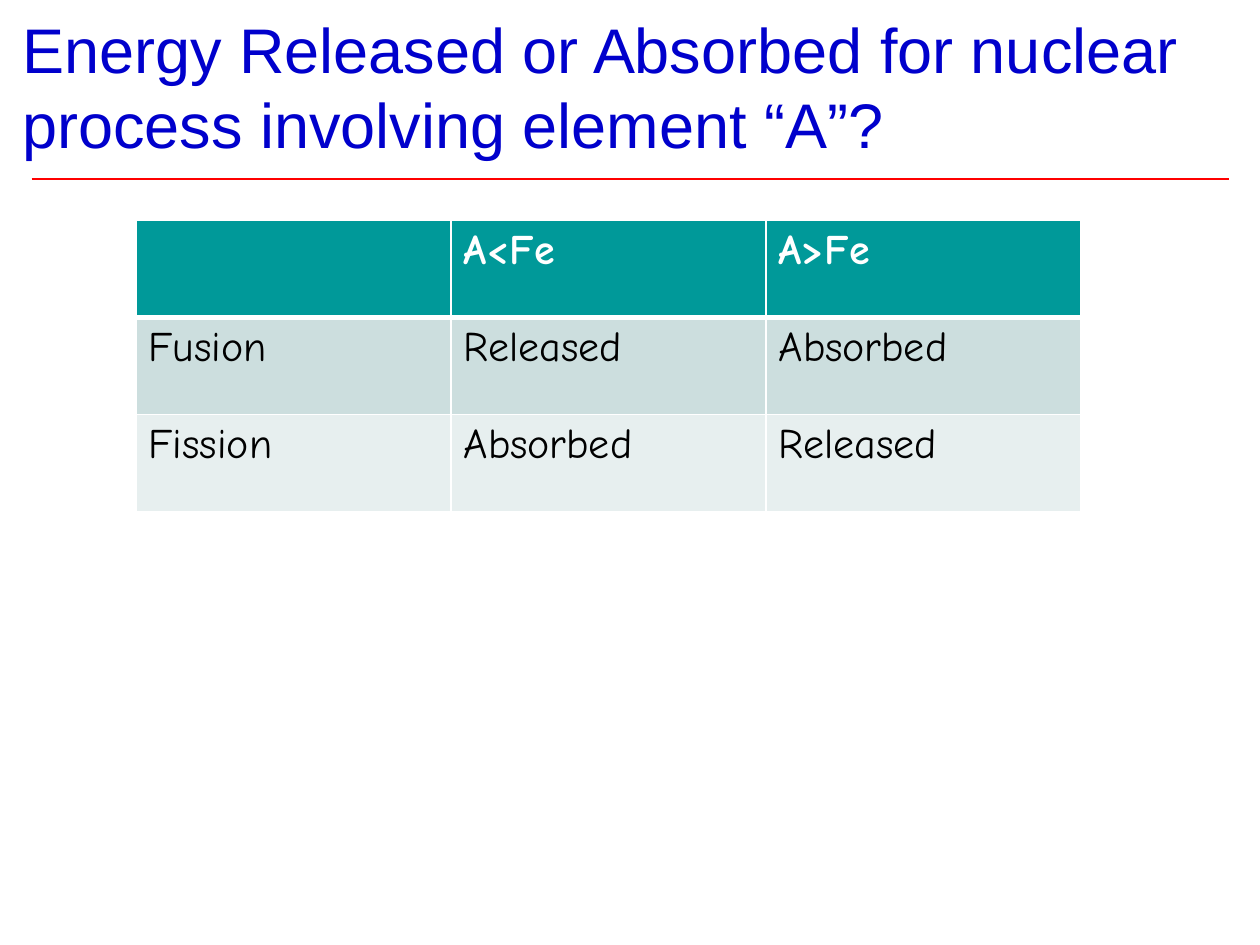
from dataclasses import dataclass

from lxml.etree import SubElement
from pptx import Presentation
from pptx.dml.color import RGBColor
from pptx.enum.shapes import MSO_CONNECTOR
from pptx.enum.text import MSO_ANCHOR
from pptx.oxml.ns import qn
from pptx.util import Inches, Pt


@dataclass(frozen=True)
class Theme:
    title_font: str = "Arial"
    table_font: str = "Comic Neue"
    title_size: int = 36
    table_size: int = 24
    title_color: str = "0000CC"
    rule_color: str = "FF0000"
    header_text: str = "FFFFFF"
    body_text: str = "000000"
    border: str = "FFFFFF"
    row_fills: tuple = ("009999", "CCDEDE", "E7EFEF")


THEME = Theme()
OUTCOMES = [
    ["", "A<Fe", "A>Fe"],
    ["Fusion", "Released", "Absorbed"],
    ["Fission", "Absorbed", "Released"],
]


def style_font(font, name, size, color, bold=False):
    font.name = name
    font.size = Pt(size)
    font.bold = bold
    font.color.rgb = RGBColor.from_string(color)


def add_rule(page, left, right, top):
    rule = page.shapes.add_connector(
        MSO_CONNECTOR.STRAIGHT, Inches(left), Inches(top), Inches(right), Inches(top)
    )
    rule.line.color.rgb = RGBColor.from_string(THEME.rule_color)
    rule.line.width = Pt(1.5)
    SubElement(rule._element.spPr, qn("a:effectLst"))


def add_title(page, text):
    box = page.shapes.add_textbox(Inches(0.08), 0, Inches(9.83), Inches(1.33))
    frame = box.text_frame
    frame.word_wrap = True
    frame.vertical_anchor = MSO_ANCHOR.BOTTOM
    para = frame.paragraphs[0]
    para.text = text
    style_font(para.font, THEME.title_font, THEME.title_size, THEME.title_color)


def add_borders(cell, top, bottom):
    """Draw the cell's borders; call before filling, as the schema puts lines first."""
    properties = cell._tc.get_or_add_tcPr()
    for side, width in (("L", 1), ("R", 1), ("T", top), ("B", bottom)):
        line = SubElement(properties, qn(f"a:ln{side}"), w=str(Pt(width)))
        fill = SubElement(line, qn("a:solidFill"))
        SubElement(fill, qn("a:srgbClr"), val=THEME.border)


def add_outcome_table(page, rows):
    table = page.shapes.add_table(
        len(rows), len(rows[0]), Inches(1.08), Inches(1.75), Inches(7.5), Inches(2.31)
    ).table
    for row_index, texts in enumerate(rows):
        header = row_index == 0
        color = THEME.header_text if header else THEME.body_text
        for column_index, text in enumerate(texts):
            cell = table.cell(row_index, column_index)
            add_borders(cell, top=3 if row_index == 1 else 1, bottom=3 if header else 1)
            cell.fill.solid()
            cell.fill.fore_color.rgb = RGBColor.from_string(THEME.row_fills[row_index])
            para = cell.text_frame.paragraphs[0]
            para.text = text
            style_font(para.font, THEME.table_font, THEME.table_size, color, bold=header)


def main():
    deck = Presentation()
    deck.slide_width, deck.slide_height = Inches(10), Inches(7.5)
    page = deck.slides.add_slide(deck.slide_layouts[6])
    add_rule(page, 0.25, 9.75, 1.42)
    add_title(page, "Energy Released or Absorbed for nuclear process involving element “A”?")
    add_outcome_table(page, OUTCOMES)
    deck.save("out.pptx")


if __name__ == "__main__":
    main()
